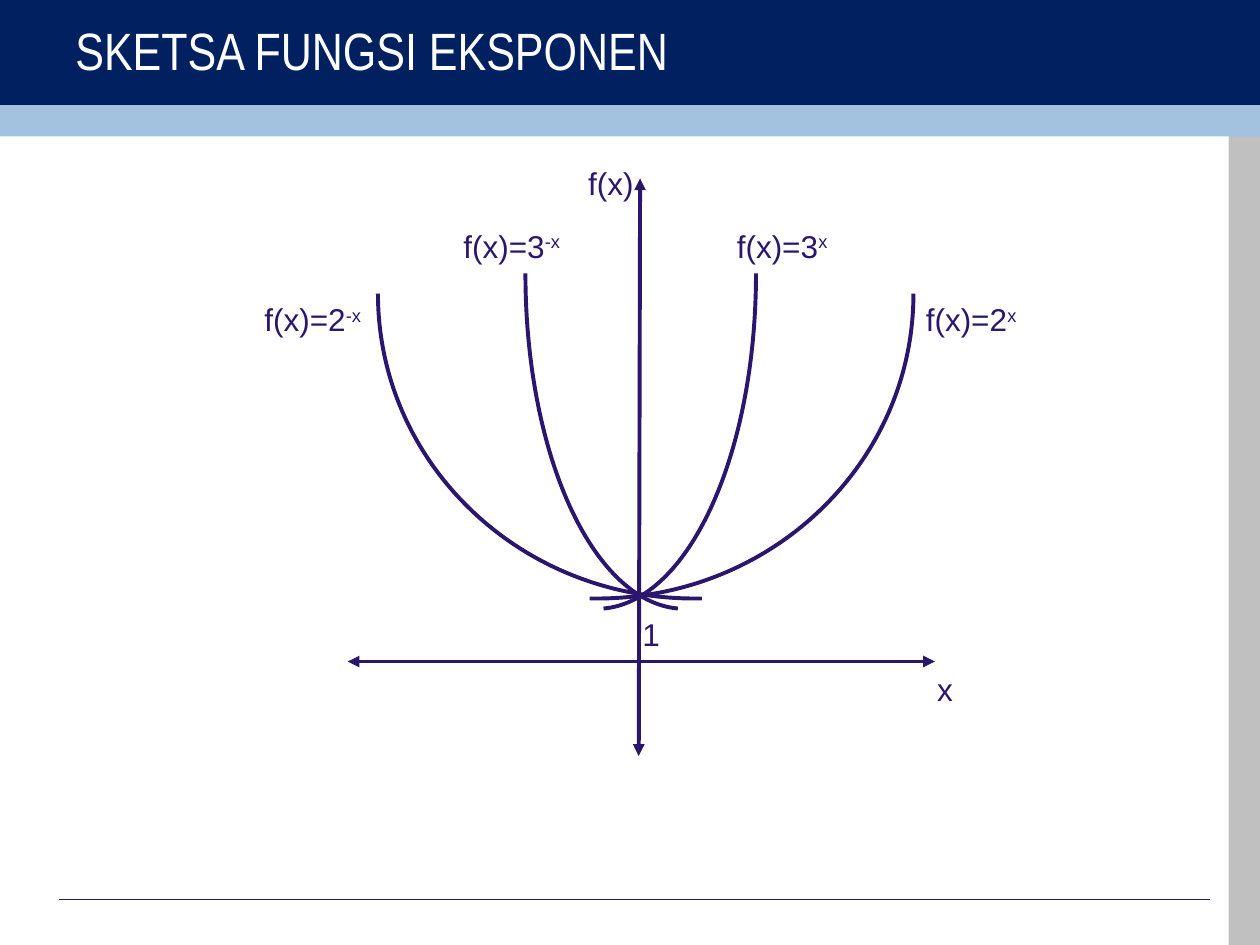
from dataclasses import dataclass

from lxml import etree
from pptx import Presentation
from pptx.dml.color import RGBColor as Rgb
from pptx.enum import shapes as sh, text as tx
from pptx.oxml.ns import qn
from pptx.util import Pt


@dataclass(frozen=True)
class Theme:
    navy: str = "002060"
    sky: str = "A3C2E0"
    gray: str = "C0C0C0"
    ink: str = "2B166E"
    white: str = "FFFFFF"
    head: float = 30
    body: float = 18
    thin: float = 0.75
    thick: float = 2.25


LOOK = Theme()


def band(slide, left, top, width, height, fill):
    box = slide.shapes.add_shape(sh.MSO_SHAPE.RECTANGLE,
                                 Pt(left), Pt(top), Pt(width), Pt(height))
    box.shadow.inherit = False
    box.fill.solid()
    box.fill.fore_color.rgb = Rgb.from_string(fill)
    box.line.fill.background()


def stroke(shape, width):
    shape.line.color.rgb = Rgb.from_string(LOOK.ink)
    shape.line.width = Pt(width)


def rule(slide, start, end, width, arrows=False):
    line = slide.shapes.add_connector(sh.MSO_CONNECTOR.STRAIGHT,
                                      *map(Pt, start + end))
    stroke(line, width)
    props = line._element.spPr
    etree.SubElement(props, qn("a:effectLst"))
    if arrows:
        for tag in ("a:headEnd", "a:tailEnd"):
            tip = etree.SubElement(line.line._get_or_add_ln(), qn(tag))
            tip.set("type", "triangle")


def curve(slide, points):
    """Draw cubic segments: a start, then two handles and an end for each."""
    start, *rest = [(Pt(x), Pt(y)) for x, y in points]
    pen = slide.shapes.build_freeform(*start)
    pen.add_line_segments(rest, close=False)
    shape = pen.convert_to_shape()
    shape.shadow.inherit = False
    shape.fill.background()
    stroke(shape, LOOK.thick)

    # Join each three straight steps into one cubic segment
    steps = list(shape._element.iter(qn("a:lnTo")))
    for i in range(0, len(steps), 3):
        bend = etree.Element(qn("a:cubicBezTo"))
        steps[i].addprevious(bend)
        for step in steps[i:i + 3]:
            bend.append(step[0])
            step.getparent().remove(step)


def pair(slide, axis, points):
    """Draw a curve and its mirror about a vertical axis."""
    curve(slide, points)
    curve(slide, [(2 * axis - x, y) for x, y in points])


def label(slide, left, top, width, words, power=""):
    box = slide.shapes.add_textbox(Pt(left), Pt(top), Pt(width), Pt(28.8))
    frame = box.text_frame
    frame.word_wrap = False
    frame.auto_size = tx.MSO_AUTO_SIZE.SHAPE_TO_FIT_TEXT
    frame.text = words
    para = frame.paragraphs[0]
    if power:
        run = para.add_run()
        run.text = power
        run.font._element.set("baseline", "30000")
    for run in para.runs:
        run.font.name = "Arial"
        run.font.size = Pt(LOOK.body)
        run.font.color.rgb = Rgb.from_string(LOOK.ink)


def title(slide, words):
    box = slide.shapes.add_textbox(Pt(36), Pt(5.76), Pt(486), Pt(44.64))
    frame = box.text_frame
    frame.word_wrap = True
    frame.vertical_anchor = tx.MSO_ANCHOR.MIDDLE
    frame.text = words
    font = frame.paragraphs[0].runs[0].font
    font.name = "Arial Narrow"
    font.size = Pt(LOOK.head)
    font.color.rgb = Rgb.from_string(LOOK.white)


def main():
    deck = Presentation()
    deck.slide_width, deck.slide_height = Pt(720), Pt(540)
    slide = deck.slides.add_slide(deck.slide_layouts[6])

    # Frame and title
    band(slide, 702, 77, 18, 463, LOOK.gray)
    rule(slide, (33.84, 514), (691.2, 514), LOOK.thin)
    band(slide, 0, 0, 720, 60, LOOK.navy)
    band(slide, 0, 60, 720, 18, LOOK.sky)
    title(slide, "SKETSA FUNGSI EKSPONEN")

    # Axes
    rule(slide, (198.72, 378), (534.24, 378), LOOK.thick, arrows=True)
    rule(slide, (365.8, 102), (365, 432), LOOK.thick, arrows=True)

    # Curves of base 3 and base 2
    pair(slide, 366.12, [(344.88, 347.76), (393.84, 343.44),
                         (432, 259.2), (432, 156.24)])
    pair(slide, 369, [(336.96, 342), (338.4, 342), (339.84, 342),
                      (341.28, 342), (441.36, 342),
                      (522, 264.24), (522, 167.76)])

    # Labels
    for spot in ((522, 168, 67, "f(x)=2", "x"),
                 (414, 126, 67, "f(x)=3", "x"),
                 (257.76, 126, 71.3, "f(x)=3", "-x"),
                 (144, 168, 71.3, "f(x)=2", "-x"),
                 (329, 90, 40.3, "f(x)"),
                 (528.5, 379.44, 23.8, "x"),
                 (360, 347.76, 24.5, "1")):
        label(slide, *spot)

    deck.save("out.pptx")


if __name__ == "__main__":
    main()
